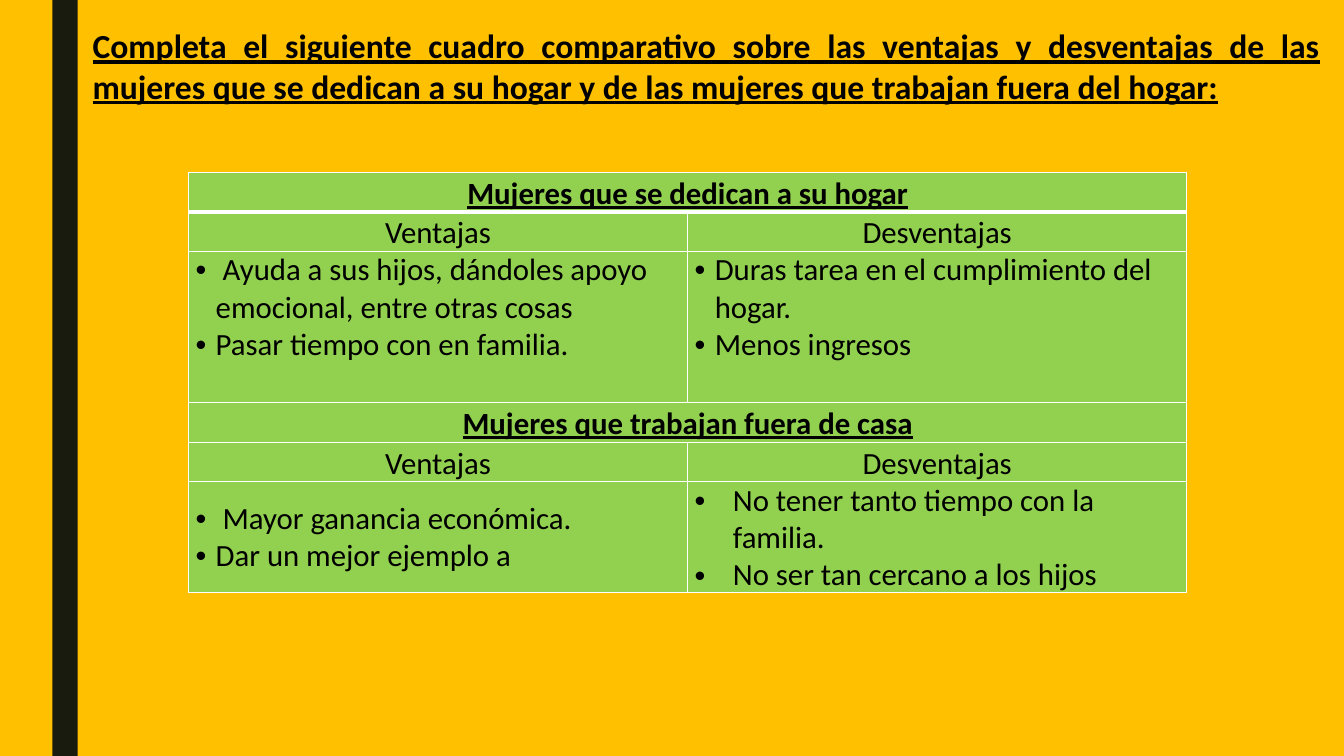
from lxml.etree import SubElement
from pptx import Presentation
from pptx.dml.color import RGBColor
from pptx.enum.shapes import MSO_SHAPE
from pptx.enum.text import MSO_ANCHOR, PP_ALIGN
from pptx.oxml.ns import qn
from pptx.util import Inches, Pt

COLORS = {
    "background": "FFC000",
    "band": "191B0E",
    "cell": "92D050",
    "border": "FFFFFF",
    "text": "000000",
}
TITLE = ("Completa el siguiente cuadro comparativo sobre las ventajas y desventajas "
         "de las mujeres que se dedican a su hogar y de las mujeres que trabajan "
         "fuera del hogar:")
# Each group: heading, height of its list row, list anchor, then (items, indent) per column.
GROUPS = [
    ("Mujeres que se dedican a su hogar", 1.5, MSO_ANCHOR.TOP, [
        ([" Ayuda a sus hijos, dándoles apoyo emocional, entre otras cosas",
          "Pasar tiempo con en familia."], 0.2),
        (["Duras tarea en el cumplimiento del hogar.", "Menos ingresos"], 0.2),
    ]),
    ("Mujeres que trabajan fuera de casa", 1.1, MSO_ANCHOR.MIDDLE, [
        ([" Mayor ganancia económica.", "Dar un mejor ejemplo a"], 0.2),
        (["No tener tanto tiempo con la familia.",
          "No ser tan cercano a los hijos"], 0.38),
    ]),
]
COLUMN_HEADS = ["Ventajas", "Desventajas"]
ROWS_PER_GROUP = 3
HEAD_HEIGHT = 0.39
COLUMN_WIDTH = 4.95


def color(name):
    return RGBColor.from_string(COLORS[name])


class SlideBuilder:
    """Holds the text style and the page being filled."""

    font_name = "Calibri"
    title_size = 24
    table_size = 22

    def __init__(self, page):
        self.page = page

    def background(self):
        fill = self.page.background.fill
        fill.solid()
        fill.fore_color.rgb = color("background")

    def band(self, left, top, width, height):
        band = self.page.shapes.add_shape(
            MSO_SHAPE.RECTANGLE, Inches(left), Inches(top), Inches(width), Inches(height))
        band.shadow.inherit = False
        band.fill.solid()
        band.fill.fore_color.rgb = color("band")
        band.line.fill.background()

    def set_text(self, para, text, size, strong=False):
        """Add the text; strong means bold and underlined."""
        para.add_run().text = text
        font = para.font
        font.name = self.font_name
        font.size = Pt(size)
        font.bold = font.underline = strong
        font.color.rgb = color("text")

    def title(self, text, left, top, width, height):
        box = self.page.shapes.add_textbox(
            Inches(left), Inches(top), Inches(width), Inches(height))
        box.text_frame.word_wrap = True
        para = box.text_frame.paragraphs[0]
        para.alignment = PP_ALIGN.JUSTIFY
        self.set_text(para, text, self.title_size, strong=True)

    def table(self, left, top, row_heights):
        """Add the two-column table with every cell filled and bordered."""
        frame = self.page.shapes.add_table(
            len(row_heights), len(COLUMN_HEADS), Inches(left), Inches(top),
            Inches(COLUMN_WIDTH * len(COLUMN_HEADS)), Inches(sum(row_heights)))
        table = frame.table
        table.first_row = table.horz_banding = False
        for column in table.columns:
            column.width = Inches(COLUMN_WIDTH)
        for index, height in enumerate(row_heights):
            row = table.rows[index]
            row.height = Inches(height)
            for cell in row.cells:
                self.style_cell(cell, index)
        return table

    def style_cell(self, cell, row_index):
        cell.margin_left = cell.margin_right = Inches(0.07)
        cell.margin_top = cell.margin_bottom = 0
        cell.vertical_anchor = MSO_ANCHOR.MIDDLE
        thick_side = {0: "lnB", 1: "lnT"}.get(row_index)
        properties = cell._tc.get_or_add_tcPr()
        for side in ("lnL", "lnR", "lnT", "lnB"):
            width = Pt(3 if side == thick_side else 1)
            line = SubElement(properties, qn(f"a:{side}"), w=str(width))
            fill = SubElement(line, qn("a:solidFill"))
            SubElement(fill, qn("a:srgbClr"), val=COLORS["border"])
        cell.fill.solid()
        cell.fill.fore_color.rgb = color("cell")

    def heading(self, cell, text, strong=False):
        para = cell.text_frame.paragraphs[0]
        para.alignment = PP_ALIGN.CENTER
        para.line_spacing = 1.07
        self.set_text(para, text, self.table_size, strong)

    def bullets(self, cell, items, indent, anchor):
        cell.vertical_anchor = anchor
        frame = cell.text_frame
        for index, item in enumerate(items):
            para = frame.add_paragraph() if index else frame.paragraphs[0]
            properties = para._p.get_or_add_pPr()
            properties.set("marL", str(Inches(indent)))
            properties.set("indent", str(-Inches(indent)))
            SubElement(properties, qn("a:buFont"), typeface="Arial")
            SubElement(properties, qn("a:buChar"), char="•")
            self.set_text(para, item, self.table_size)


def main():
    deck = Presentation()
    deck.slide_width = Inches(13.33)
    deck.slide_height = Inches(7.5)
    builder = SlideBuilder(deck.slides.add_slide(deck.slide_layouts[6]))
    builder.background()
    builder.band(0.52, 0, 0.25, 7.5)
    builder.title(TITLE, 0.82, 0.2, 12.37, 1.31)

    row_heights = []
    for _, list_height, _, _ in GROUPS:
        row_heights += [HEAD_HEIGHT, HEAD_HEIGHT, list_height]
    table = builder.table(1.87, 1.71, row_heights)

    for group, (heading, _, anchor, lists) in enumerate(GROUPS):
        top_row = group * ROWS_PER_GROUP
        table.cell(top_row, 0).merge(table.cell(top_row, 1))
        builder.heading(table.cell(top_row, 0), heading, strong=True)
        for column, (items, indent) in enumerate(lists):
            builder.heading(table.cell(top_row + 1, column), COLUMN_HEADS[column])
            builder.bullets(table.cell(top_row + 2, column), items, indent, anchor)

    deck.save("out.pptx")


if __name__ == "__main__":
    main()
